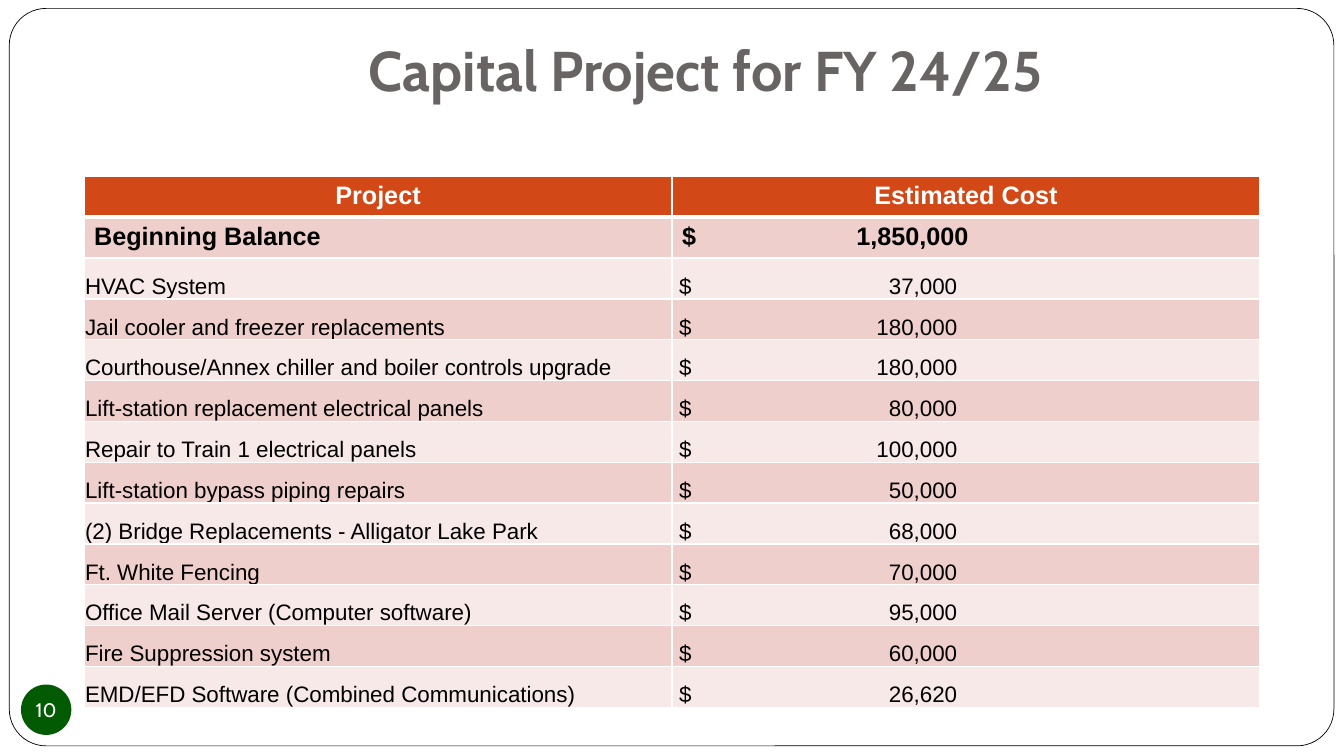
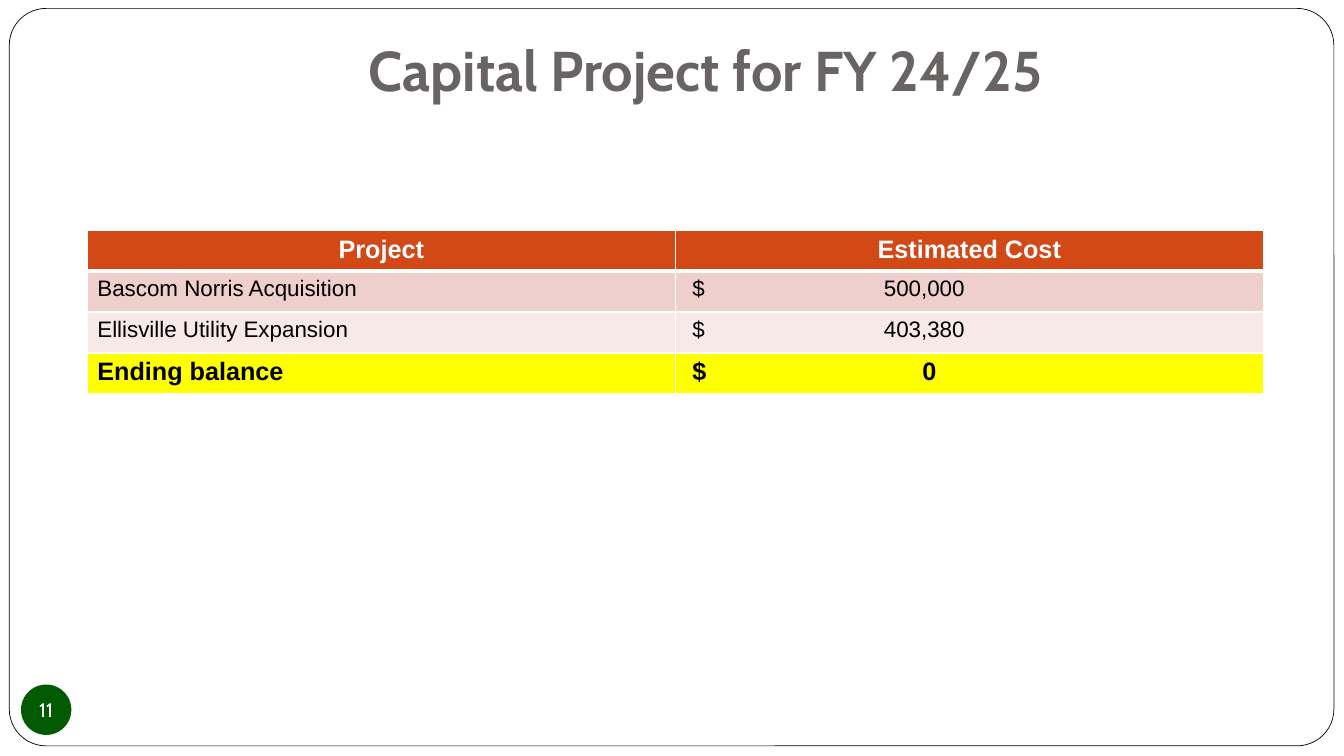
import pptx
import pptx.dml.color
import pptx.enum.shapes
import pptx.enum.text
import pptx.util
from pptx.oxml.ns import qn
from lxml import etree

COLORS = {
    "white": "FFFFFF",
    "black": "000000",
    "title": "696464",
    "header": "D34817",
    "dark band": "EFCFCC",
    "light band": "F7E9E8",
    "highlight": "FFFF00",
    "badge": "025A02",
}
TITLE = "Capital Project for FY 24/25"
HEADINGS = ("Project", "Estimated Cost")
ALIGN = pptx.enum.text.PP_ALIGN
ANCHOR = pptx.enum.text.MSO_ANCHOR
SHAPES = pptx.enum.shapes.MSO_SHAPE

# Each row style: size, bold, anchor, label indent, cost indent, top and bottom
# inset, and the right tab stop of the amount (lengths in inches)
ROW_STYLES = {
    "opening": (18, True, ANCHOR.TOP, 0.1, 0.1, 0.05, 2.84),
    "tight": (16, False, ANCHOR.BOTTOM, 0.01, 0.07, 0, 2.76),
    "roomy": (16, False, ANCHOR.TOP, 0.1, 0.17, 0.05, 2.7),
    "closing": (18, True, ANCHOR.TOP, 0.1, 0.17, 0.05, 2.42),
}

# Table positions are in grid units
PAGES = [
    {
        "number": "10", "left": 1, "top": 2.1, "height": 6.32,
        "rows": [
            ("Beginning Balance", "1,850,000", "opening"),
            ("HVAC System", "37,000", "tight"),
            ("Jail cooler and freezer replacements", "180,000", "tight"),
            ("Courthouse/Annex chiller and boiler controls upgrade", "180,000", "tight"),
            ("Lift-station replacement electrical panels", "80,000", "tight"),
            ("Repair to Train 1 electrical panels", "100,000", "tight"),
            ("Lift-station bypass piping repairs", "50,000", "tight"),
            ("(2) Bridge Replacements - Alligator Lake Park", "68,000", "tight"),
            ("Ft. White Fencing", "70,000", "tight"),
            ("Office Mail Server (Computer software)", "95,000", "tight"),
            ("Fire Suppression system", "60,000", "tight"),
            ("EMD/EFD Software (Combined Communications)", "26,620", "tight"),
        ],
    },
    {
        "number": "11", "left": 1.04, "top": 2.74, "height": 1.95,
        "rows": [
            ("Bascom Norris Acquisition", "500,000", "roomy"),
            ("Ellisville Utility Expansion", "403,380", "roomy"),
            ("Ending balance", "0", "closing"),
        ],
    },
]

presentation = pptx.Presentation()
presentation.slide_width = pptx.util.Inches(13.333)
presentation.slide_height = pptx.util.Inches(7.5)
unit = presentation.slide_width / 16  # square grid: 16 columns by 9 rows


def grid(*units):
    """Turn grid units into slide lengths."""
    return [pptx.util.Emu(round(value * unit)) for value in units]


def write_text(frame, text, size=16, font="Arial", color="black", bold=False,
               align=ALIGN.LEFT, anchor=ANCHOR.TOP, margins=None, tab=None):
    """Write one paragraph; margins are left, top, right, bottom in inches."""
    frame.vertical_anchor = anchor
    if margins:
        (frame.margin_left, frame.margin_top,
         frame.margin_right, frame.margin_bottom) = map(pptx.util.Inches, margins)
    text_frame = getattr(frame, "text_frame", frame)  # a cell holds its own frame
    paragraph = text_frame.paragraphs[0]
    paragraph.alignment = align
    if tab:
        tab_list = etree.SubElement(paragraph._p.get_or_add_pPr(), qn("a:tabLst"))
        etree.SubElement(tab_list, qn("a:tab"), pos=str(pptx.util.Inches(tab)), algn="r")
    run = paragraph.add_run()
    run.text = text
    run.font.size = pptx.util.Pt(size)
    run.font.name = font
    run.font.bold = bold
    run.font.color.rgb = pptx.dml.color.RGBColor.from_string(COLORS[color])


for page in PAGES:
    slide = presentation.slides.add_slide(presentation.slide_layouts[6])

    frame = slide.shapes.add_shape(SHAPES.ROUNDED_RECTANGLE, *grid(0.11, 0.1, 15.77, 8.78))
    frame.adjustments[0] = 0.05
    frame.line.color.rgb = pptx.dml.color.RGBColor.from_string(COLORS["black"])
    frame.line.width = pptx.util.Pt(0.5)

    title = slide.shapes.add_textbox(*grid(3, 0.36, 10.8, 1.5))
    title.text_frame.word_wrap = True
    write_text(title.text_frame, TITLE, size=40, font="Cabin", color="title", bold=True,
               align=ALIGN.CENTER, margins=(0.1, 0.05, 0.1, 0.1))

    row_count = len(page["rows"]) + 1
    table = slide.shapes.add_table(
        row_count, 2, *grid(page["left"], page["top"], 14, page["height"])).table

    for column, heading in enumerate(HEADINGS):
        write_text(table.cell(0, column), heading, size=18, color="white", bold=True,
                   align=ALIGN.CENTER)

    for row, (project, amount, style) in enumerate(page["rows"], start=1):
        size, bold, anchor, label_indent, cost_indent, inset, tab = ROW_STYLES[style]
        row_format = {"size": size, "bold": bold, "anchor": anchor}
        write_text(table.cell(row, 0), project, **row_format,
                   margins=(label_indent, inset, 0.01, inset))
        write_text(table.cell(row, 1), f"$\t{amount}", **row_format,
                   margins=(cost_indent, inset, 0.01, inset), tab=tab)

    for row in range(row_count):
        if row == 0:
            band = "header"
        elif page["rows"][row - 1][2] == "closing":
            band = "highlight"
        else:
            band = "dark band" if row % 2 else "light band"
        borders = {"lnL": 1, "lnR": 1, "lnT": 3 if row == 1 else 1, "lnB": 3 if row == 0 else 1}
        for cell in table.rows[row].cells:
            properties = cell._tc.get_or_add_tcPr()
            for side, points in borders.items():
                line = etree.SubElement(properties, qn(f"a:{side}"), w=str(pptx.util.Pt(points)))
                line_fill = etree.SubElement(line, qn("a:solidFill"))
                etree.SubElement(line_fill, qn("a:srgbClr"), val=COLORS["white"])
            cell.fill.solid()
            cell.fill.fore_color.rgb = pptx.dml.color.RGBColor.from_string(COLORS[band])

    badge = slide.shapes.add_shape(SHAPES.OVAL, *grid(0.25, 8.15, 0.6, 0.6))
    badge.line.fill.background()
    badge.text_frame.word_wrap = False
    write_text(badge.text_frame, page["number"], size=14, font="Cabin", color="white",
               align=ALIGN.CENTER, anchor=ANCHOR.MIDDLE, margins=(0, 0, 0, 0))

    for shape, color in ((frame, "white"), (badge, "badge")):
        shape.shadow.inherit = False
        shape.fill.solid()
        shape.fill.fore_color.rgb = pptx.dml.color.RGBColor.from_string(COLORS[color])

presentation.save("out.pptx")
